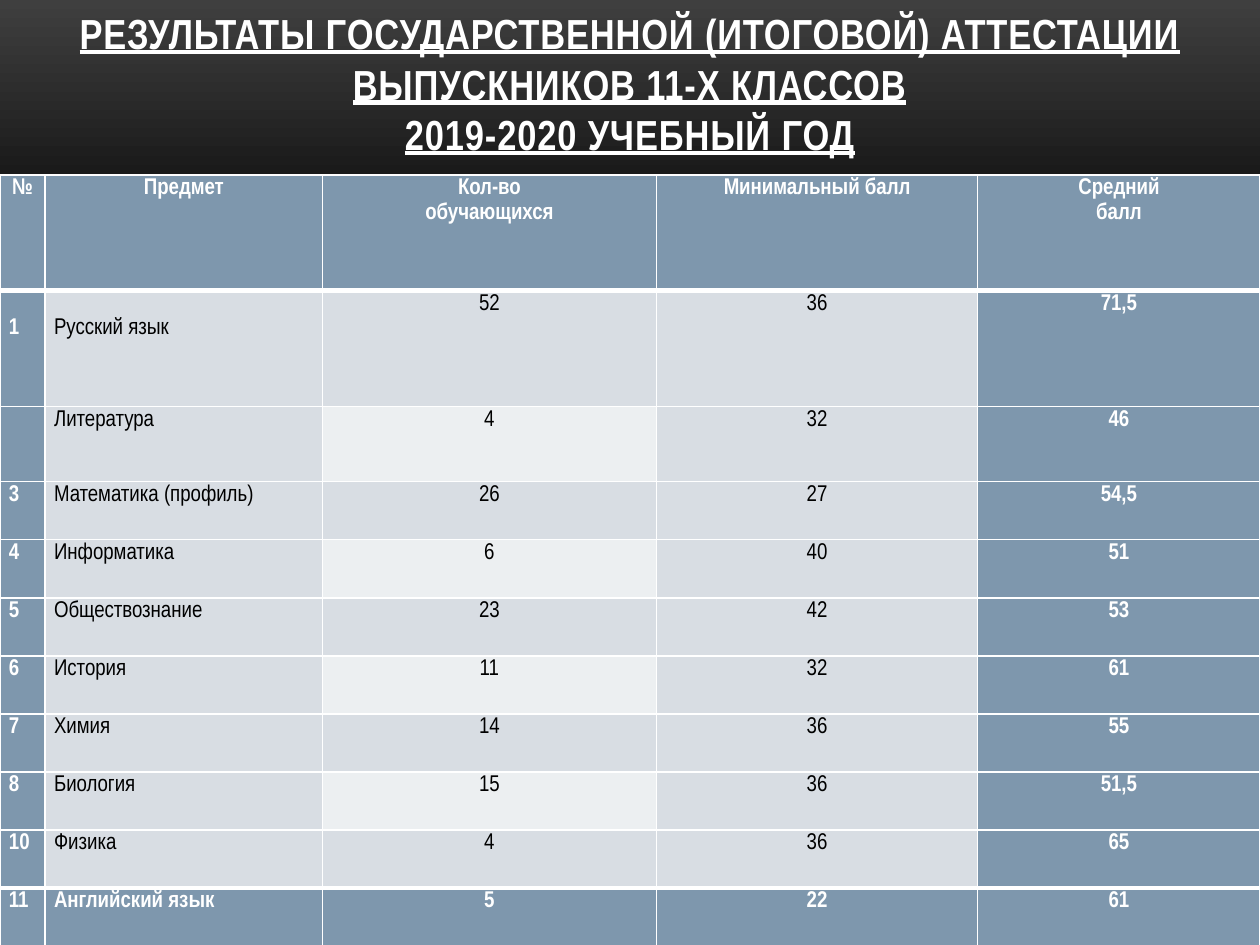
from lxml import etree
from pptx import Presentation
from pptx import util as u
from pptx.dml.color import RGBColor
from pptx.enum import text
from pptx.oxml.ns import qn

STEEL, PALE, LIGHT = "7E97AD", "D8DDE3", "ECEFF1"
WHITE, BLACK = "FFFFFF", "000000"
MID, JUST = text.PP_ALIGN.CENTER, text.PP_ALIGN.JUSTIFY


def paint(fmt, tone):
    """Give a fill a solid colour."""
    fmt.solid()
    fmt.fore_color.rgb = RGBColor.from_string(tone)


def write(frame, words, size=13, tone=WHITE, bold=True, line=False,
          align=MID, lead=1.15, track=0):
    """Fill a text frame; newlines split paragraphs, \\v breaks a line."""
    frame.text = words
    for para in frame.paragraphs:
        para.alignment, para.line_spacing = align, lead
        for run in para.runs:
            font = run.font
            font.name, font.size = "Arial Narrow", u.Pt(size)
            font.bold, font.underline = bold, line
            paint(font.fill, tone)
            if track:
                run._r.get_or_add_rPr().set("spc", str(track))


deck = Presentation()
deck.slide_width, deck.slide_height = u.Cm(25.4), u.Cm(19.05)
slide = deck.slides.add_slide(deck.slide_layouts[5])

# Background: dark grey fading to black
back = slide.background.fill
back.gradient()
back.gradient_angle = 270
for stop, (tone, pos) in zip(back.gradient_stops, [("3F3F3F", 0), (BLACK, 0.31)]):
    stop.color.rgb = RGBColor.from_string(tone)
    stop.position = pos

# Title
title = slide.shapes.title
title.left, title.top = u.Cm(0), u.Cm(0)
title.width, title.height = u.Cm(25.4), u.Cm(3.33)
frame = title.text_frame
frame.word_wrap = True
frame.auto_size = text.MSO_AUTO_SIZE.NONE
frame.vertical_anchor = text.MSO_ANCHOR.BOTTOM
write(frame, "РЕЗУЛЬТАТЫ ГОСУДАРСТВЕННОЙ (ИТОГОВОЙ) АТТЕСТАЦИИ "
      "ВЫПУСКНИКОВ 11-Х КЛАССОВ\v2019-2020 УЧЕБНЫЙ ГОД",
      size=24, line=True, lead=1.0, track=50)

# Table data
rows = [
    ("№", "Предмет", "Кол-во\nобучающихся", "Минимальный балл", "Средний\nбалл"),
    ("1", "Русский язык", "52", "36", "71,5"),
    ("", "Литература", "4", "32", "46"),
    ("3", "Математика (профиль)", "26", "27", "54,5"),
    ("4", "Информатика", "6", "40", "51"),
    ("5", "Обществознание", "23", "42", "53"),
    ("6", "История", "11", "32", "61"),
    ("7", "Химия", "14", "36", "55"),
    ("8", "Биология", "15", "36", "51,5"),
    ("10", "Физика", "4", "36", "65"),
    ("11", "Английский язык", "5", "22", "61"),
]
wide = [0.91, 5.59, 6.73, 6.48, 5.69]
high = [2.33, 2.33, 1.52] + [1.17] * 8
last = len(rows) - 1

grid = slide.shapes.add_table(len(rows), len(wide), u.Cm(0), u.Cm(3.53),
                              u.Cm(sum(wide)), u.Cm(sum(high))).table
for col, size in zip(grid.columns, wide):
    col.width = u.Cm(size)
for row, size in zip(grid.rows, high):
    row.height = u.Cm(size)

# Cells: steel frame round a pale body, the count column banded
for r, row in enumerate(rows):
    for c, words in enumerate(row):
        cell = grid.cell(r, c)
        edge = r in (0, last) or c in (0, 4)
        cell.margin_left = cell.margin_right = u.Cm(0.18)
        cell.margin_top = u.Cm(0.49 if r == 1 and c < 2 else 0)
        cell.margin_bottom = u.Cm(0)
        write(cell.text_frame, words, bold=edge, tone=WHITE if edge else BLACK,
              align=JUST if r and c < 2 else MID)

        # White borders, thick under the head and over the last row
        props = cell._tc.get_or_add_tcPr()
        for side in "LRTB":
            thick = (r, side) in [(0, "B"), (1, "T"), (last - 1, "B"), (last, "T")]
            rule = etree.SubElement(props, qn("a:ln" + side),
                                    w=str(u.Pt(3 if thick else 1)))
            solid = etree.SubElement(rule, qn("a:solidFill"))
            etree.SubElement(solid, qn("a:srgbClr"), val=WHITE)
        band = LIGHT if c == 2 and r % 2 == 0 else PALE
        paint(cell.fill, STEEL if edge else band)

deck.save("out.pptx")
